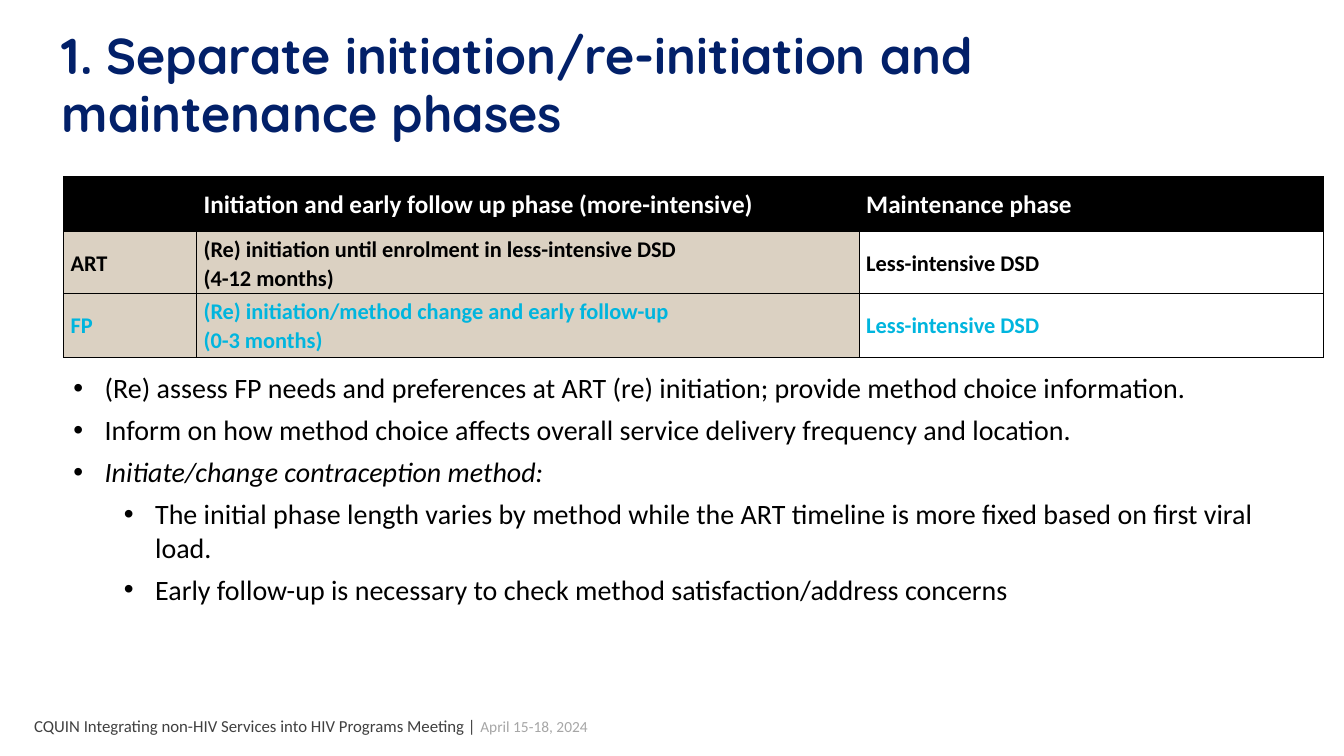
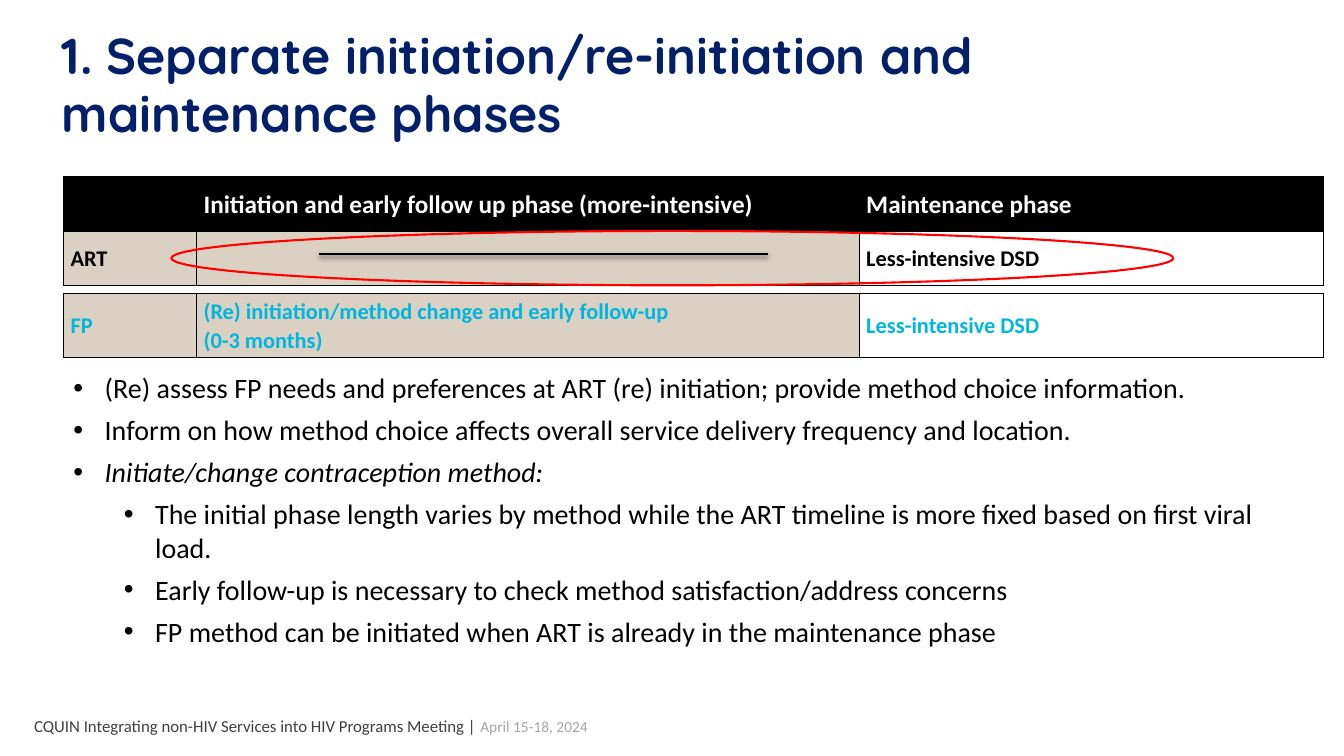
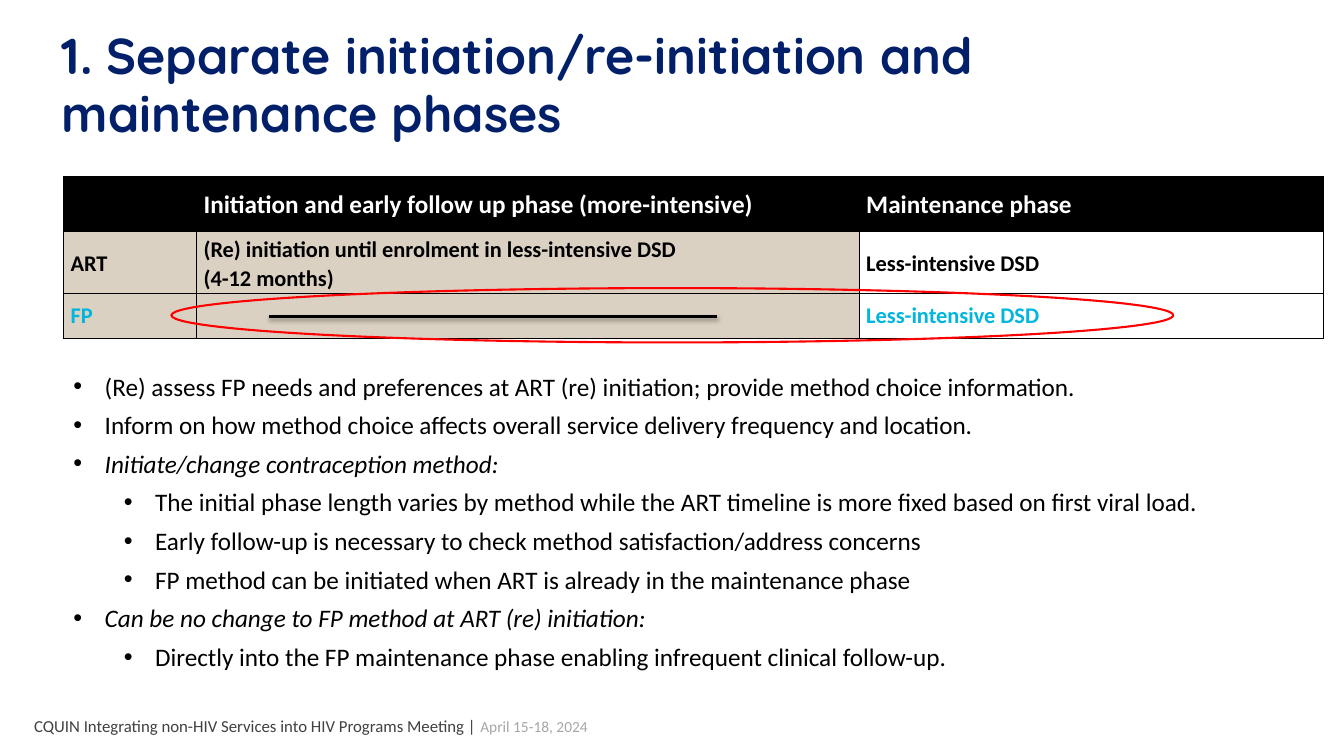
"""Build three slides on separating initiation and maintenance phases."""
from pptx import Presentation
from pptx.dml.color import RGBColor
from pptx.enum.shapes import MSO_CONNECTOR, MSO_SHAPE
from pptx.enum.text import MSO_ANCHOR, MSO_AUTO_SIZE, PP_ALIGN
from pptx.oxml import parse_xml
from pptx.oxml.ns import nsdecls
from pptx.util import Cm, Pt

NAVY, CYAN, SAND, RED = "022069", "00B5DE", "DBD1C2", "FF0000"
BLACK, WHITE, DARK_GREY, GREY = "000000", "FFFFFF", "404040", "A6A6A6"
LEFT, WIDTH = 1.6, 31.75
COLUMNS = [3.35, 16.7, 11.7]


def rgb(value):
    return RGBColor.from_string(value)


def add_run(p, text, size, color, bold=False, italic=False, font="Calibri"):
    r = p.add_run()
    r.text = text
    r.font.name, r.font.size = font, Pt(size)
    r.font.bold, r.font.italic = bold, italic
    r.font.color.rgb = rgb(color)


HEADER = ["", "Initiation and early follow up phase (more-intensive)", "Maintenance phase"]
ART_START = "(Re) initiation until enrolment in less-intensive DSD\n(4-12 months)"
FP_START = "(Re) initiation/method change and early follow-up\n(0-3 months)"
MAINTENANCE = "Less-intensive DSD"

BULLETS = [
    (0, False, "(Re) assess FP needs and preferences at ART (re) initiation; provide method choice information."),
    (0, False, "Inform on how method choice affects overall service delivery frequency and location."),
    (0, True, "Initiate/change contraception method:"),
    (1, False, "The initial phase length varies by method while the ART timeline is more fixed based on first viral load."),
    (1, False, "Early follow-up is necessary to check method satisfaction/address concerns"),
    (1, False, "FP method can be initiated when ART is already in the maintenance phase"),
    (0, True, "Can be no change to FP method at ART (re) initiation:"),
    (1, False, "Directly into the FP maintenance phase enabling infrequent clinical follow-up."),
]

SLIDES = [
    dict(art=ART_START, fp=FP_START, bullets=5, size=20, height=6.25, marks=None),
    dict(art="", fp=FP_START, bullets=6, size=20, height=8.38, marks=(5.82, 8.05, 6.4)),
    dict(art=ART_START, fp="", bullets=8, size=18, height=7.9, marks=(7.26, 6.78, 7.98)),
]

prs = Presentation()
prs.slide_width, prs.slide_height = Cm(33.87), Cm(19.05)

for content in SLIDES:
    s = prs.slides.add_slide(prs.slide_layouts[5])

    title = s.shapes.title
    title.left, title.top, title.width, title.height = Cm(1.3), Cm(0.6), Cm(31.27), Cm(3.5)
    tf = title.text_frame
    tf.word_wrap, tf.auto_size = True, MSO_AUTO_SIZE.NONE
    tf.vertical_anchor = MSO_ANCHOR.TOP
    p = tf.paragraphs[0]
    p.alignment, p.line_spacing = PP_ALIGN.LEFT, 0.95
    add_run(p, "1. Separate initiation/re-initiation and maintenance phases", 36, NAVY, bold=True, font="Quicksand")

    footer = s.shapes.add_textbox(Cm(0.61), Cm(17.78), Cm(17.53), Cm(1.02))
    tf = footer.text_frame
    tf.word_wrap, tf.vertical_anchor = True, MSO_ANCHOR.MIDDLE
    p = tf.paragraphs[0]
    add_run(p, "CQUIN Integrating non-HIV Services into HIV Programs Meeting | ", 12, DARK_GREY)
    add_run(p, "April 15-18, 2024", 11, GREY)

    art_height = 1.57 if content["art"] else 1.37
    fp_height = 1.57 if content["fp"] else 1.12
    header_row = (HEADER, 1.37, 18, WHITE, [BLACK] * 3)
    art_row = (["ART", content["art"], MAINTENANCE], art_height, 16, BLACK, [SAND, SAND, WHITE])
    fp_row = (["FP", content["fp"], MAINTENANCE], fp_height, 16, CYAN, [SAND, SAND, WHITE])

    for top, rows in [(4.45, [header_row, art_row]), (7.39, [fp_row])]:
        height = sum(row[1] for row in rows)
        table = s.shapes.add_table(len(rows), 3, Cm(LEFT), Cm(top), Cm(WIDTH), Cm(height)).table
        table.first_row = table.horz_banding = False
        for column, width in zip(table.columns, COLUMNS):
            column.width = Cm(width)
        for row, (texts, row_height, size, color, fills) in zip(table.rows, rows):
            row.height = Cm(row_height)
            for cell, text, fill in zip(row.cells, texts, fills):
                cell.margin_left = cell.margin_right = Cm(0.18)
                cell.margin_top = cell.margin_bottom = Cm(0.1)
                cell.vertical_anchor = MSO_ANCHOR.MIDDLE
                for side in "LRTB":
                    cell._tc.get_or_add_tcPr().append(parse_xml(
                        f'<a:ln{side} {nsdecls("a")} w="3175"><a:solidFill>'
                        f'<a:srgbClr val="{BLACK}"/></a:solidFill></a:ln{side}>'))
                cell.fill.solid()
                cell.fill.fore_color.rgb = rgb(fill)
                for i, line in enumerate(text.split("\n") if text else []):
                    p = cell.text_frame.add_paragraph() if i else cell.text_frame.paragraphs[0]
                    p.line_spacing = 1.05
                    add_run(p, line, size, color, bold=True)

    body = s.shapes.add_textbox(Cm(LEFT), Cm(9.22), Cm(WIDTH), Cm(content["height"]))
    tf = body.text_frame
    tf.word_wrap = True
    for i, (level, italic, text) in enumerate(BULLETS[:content["bullets"]]):
        p = tf.add_paragraph() if i else tf.paragraphs[0]
        p.level = level
        pPr = p._p.get_or_add_pPr()
        pPr.set("marL", str(Cm(0.79 + 1.27 * level)))
        pPr.set("indent", str(-Cm(0.79)))
        pPr.append(parse_xml(f'<a:buFont {nsdecls("a")} typeface="Arial"/>'))
        pPr.append(parse_xml(f'<a:buChar {nsdecls("a")} char="•"/>'))
        p.space_after = Pt(6)
        add_run(p, text, content["size"], BLACK, italic=italic)

    if content["marks"]:
        oval_top, line_left, line_top = content["marks"]
        sp = s.shapes.add_shape(MSO_SHAPE.OVAL, Cm(4.32), Cm(oval_top), Cm(25.25), Cm(1.37))
        sp.shadow.inherit = False
        sp.fill.background()
        sp.line.color.rgb, sp.line.width = rgb(RED), Pt(1.5)

        dash = s.shapes.add_connector(
            MSO_CONNECTOR.STRAIGHT, Cm(line_left), Cm(line_top), Cm(line_left + 11.3), Cm(line_top))
        dash.line.color.rgb, dash.line.width = rgb(BLACK), Pt(2)
        dash._element.spPr.append(parse_xml(
            f'<a:effectLst {nsdecls("a")}><a:outerShdw blurRad="40000" dist="20000" dir="5400000" '
            f'rotWithShape="0"><a:srgbClr val="{BLACK}"><a:alpha val="38000"/></a:srgbClr>'
            '</a:outerShdw></a:effectLst>'))

prs.save("out.pptx")
